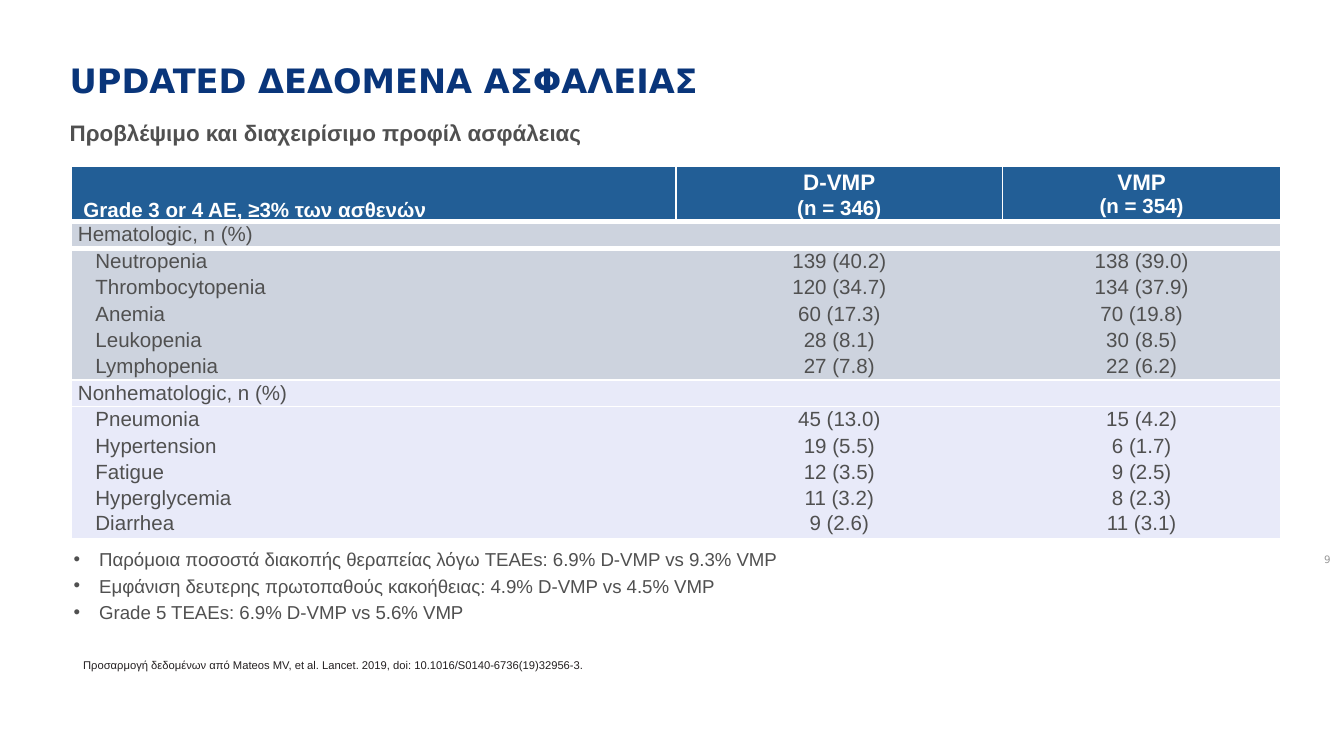
from lxml import etree
from pptx import Presentation
from pptx import util as u
from pptx.dml.color import RGBColor
from pptx.enum import text
from pptx.oxml import ns

COLORS = {
    "title": "09357A", "body": "505050", "note": "231F20", "number": "989898",
    "header": "225E96", "hematologic": "CDD3DE", "nonhematologic": "E8EAF9",
    "white": "FFFFFF",
}
PLAIN_STYLE = "{2D5ABB26-0587-4C30-8999-92F81FD0307C}"
CENTER = text.PP_ALIGN.CENTER
COLUMNS = [4.5, 2.43, 2.07]
HEADERS = [["Grade 3 or 4 AΕ, ≥3% των ασθενών"], ["D-VMP", "(n = 346)"], ["VMP", "(n = 354)"]]
GROUPS = [
    ("hematologic", [
        [["Hematologic, n (%)"], [], []],
        [["Neutropenia"], ["139 (40.2)"], ["138 (39.0)"]],
        [["Thrombocytopenia"], ["120 (34.7)"], ["134 (37.9)"]],
        [["Anemia"], ["60 (17.3)"], ["70 (19.8)"]],
        [["Leukopenia"], ["28 (8.1)"], ["30 (8.5)"]],
        [["Lymphopenia"], ["27 (7.8)"], ["22 (6.2)"]],
    ]),
    ("nonhematologic", [
        [["Nonhematologic, n (%)"], [], []],
        [["Pneumonia"], ["45 (13.0)"], ["15 (4.2)"]],
        [["Hypertension"], ["19 (5.5)"], ["6 (1.7)"]],
        [["Fatigue"], ["12 (3.5)"], ["9 (2.5)"]],
        [["Hyperglycemia", "Diarrhea"], ["11 (3.2)", "9 (2.6)"], ["8 (2.3)", "11 (3.1)"]],
    ]),
]
FINDINGS = [
    "Παρόμοια ποσοστά διακοπής θεραπείας λόγω TEAEs: 6.9% D-VMP vs 9.3% VMP",
    "Εμφάνιση δευτερης πρωτοπαθούς κακοήθειας: 4.9% D-VMP vs 4.5% VMP",
    "Grade 5 TEAEs: 6.9% D-VMP vs 5.6% VMP",
]


def add_span(para, words, size, color, bold=False, font="Arial"):
    span = para.add_run()
    span.text = words
    span.font.name = font
    span.font.size = u.Pt(size)
    span.font.bold = bold
    span.font.color.rgb = RGBColor.from_string(COLORS[color])


def next_para(frame, index):
    return frame.paragraphs[0] if index == 0 else frame.add_paragraph()


def set_indent(para, left, first=0):
    properties = para._p.get_or_add_pPr()
    properties.set("marL", str(u.Inches(left)))
    properties.set("indent", str(u.Inches(first)))
    return properties


def add_frame(page, left, top, width, height):
    box = page.shapes.add_textbox(*map(u.Inches, (left, top, width, height)))
    box.text_frame.word_wrap = True
    return box.text_frame


def add_line(page, area, words, size, color, **style):
    frame = add_frame(page, *area)
    add_span(frame.paragraphs[0], words, size, color, **style)
    return frame


def add_findings(page, area):
    frame = add_frame(page, *area)
    for index, words in enumerate(FINDINGS):
        para = next_para(frame, index)
        properties = set_indent(para, 0.19, -0.19)
        para.space_after = u.Pt(2)
        etree.SubElement(properties, ns.qn("a:buFont"), typeface="Arial")
        etree.SubElement(properties, ns.qn("a:buChar"), char="•")
        add_span(para, words, 10, "body")


def set_borders(cell, widths):
    properties = cell._tc.get_or_add_tcPr()
    for side, width in widths.items():
        if width:
            line = etree.SubElement(properties, ns.qn("a:ln" + side), w=str(u.Pt(width)))
            fill = etree.SubElement(line, ns.qn("a:solidFill"))
            etree.SubElement(fill, ns.qn("a:srgbClr"), val=COLORS["white"])


def style_cell(cell, fill, borders):
    set_borders(cell, borders)
    cell.fill.solid()
    cell.fill.fore_color.rgb = RGBColor.from_string(COLORS[fill])
    cell.margin_left = cell.margin_right = u.Inches(0.05)
    cell.margin_top = cell.margin_bottom = 0


def fill_header(row):
    for column, lines in enumerate(HEADERS):
        cell = row.cells[column]
        style_cell(cell, "header", {"L": 1, "R": 1, "T": 1, "B": 3})
        cell.vertical_anchor = text.MSO_ANCHOR.MIDDLE if column else text.MSO_ANCHOR.BOTTOM
        for index, words in enumerate(lines):
            para = next_para(cell.text_frame, index)
            para.line_spacing = 1.0 if column == 2 else 1.07
            if column:
                para.alignment = CENTER
            else:
                set_indent(para, 0.04)
            add_span(para, words, 12 if column and index == 0 else 11, "white", bold=True)


def fill_row(row, values, fill, top, bottom):
    for column, lines in enumerate(values):
        cell = row.cells[column]
        style_cell(cell, fill, {"L": int(column == 0), "R": int(column == 2), "T": top, "B": bottom})
        if not lines:
            etree.SubElement(cell.text_frame.paragraphs[0]._p, ns.qn("a:endParaRPr"), sz="1100")
        for index, words in enumerate(lines):
            para = next_para(cell.text_frame, index)
            para.line_spacing = 1.07
            if column:
                para.alignment = CENTER
            elif not top:
                set_indent(para, 0.13)
            add_span(para, words, 11, "body")


def add_events_table(page, left, top):
    count = 1 + sum(len(rows) for _, rows in GROUPS)
    table = page.shapes.add_table(
        count, len(COLUMNS), *map(u.Inches, (left, top, sum(COLUMNS), 2.6))).table
    table._tbl.tblPr.find(ns.qn("a:tableStyleId")).text = PLAIN_STYLE
    for column, width in zip(table.columns, COLUMNS):
        column.width = u.Inches(width)
    for row in table.rows:
        row.height = u.Inches(2.05) // 11
    table.rows[0].height = u.Inches(0.36)
    table.rows[count - 1].height = u.Inches(0.29)
    fill_header(table.rows[0])
    position = 1
    for fill, rows in GROUPS:
        for index, values in enumerate(rows):
            top_border = 0 if index else 3 if position == 1 else 1
            fill_row(table.rows[position], values, fill, top_border, int(index == len(rows) - 1))
            position += 1


def build_safety_page(page):
    number = add_line(page, (9.56, 4.02, 0.44, 0.29), "9", 5.5, "number", font="DejaVu Sans")
    number.vertical_anchor = text.MSO_ANCHOR.MIDDLE
    number.paragraphs[0].alignment = text.PP_ALIGN.RIGHT
    add_line(page, (0.42, 0.4, 9, 0.59), "UPDATED ΔΕΔΟΜΕΝΑ ΑΣΦΑΛΕΙΑΣ", 18, "title",
             bold=True, font="DejaVu Sans")
    add_events_table(page, 0.53, 1.24)
    add_findings(page, (0.45, 4.03, 9, 0.77))
    add_line(page, (0.42, 0.84, 4.16, 0.3), "Προβλέψιμο και διαχειρίσιμο προφίλ ασφάλειας",
             12, "body", bold=True).word_wrap = False
    add_line(page, (0.52, 4.85, 8.32, 0.2),
             "Προσαρμογή δεδομένων από Mateos MV, et al. Lancet. 2019, "
             "doi: 10.1016/S0140-6736(19)32956-3.", 6, "note")


def main():
    deck = Presentation()
    deck.slide_width = u.Inches(10)
    deck.slide_height = deck.slide_width * 9 // 16
    build_safety_page(deck.slides.add_slide(deck.slide_layouts[6]))
    deck.save("out.pptx")


if __name__ == "__main__":
    main()
